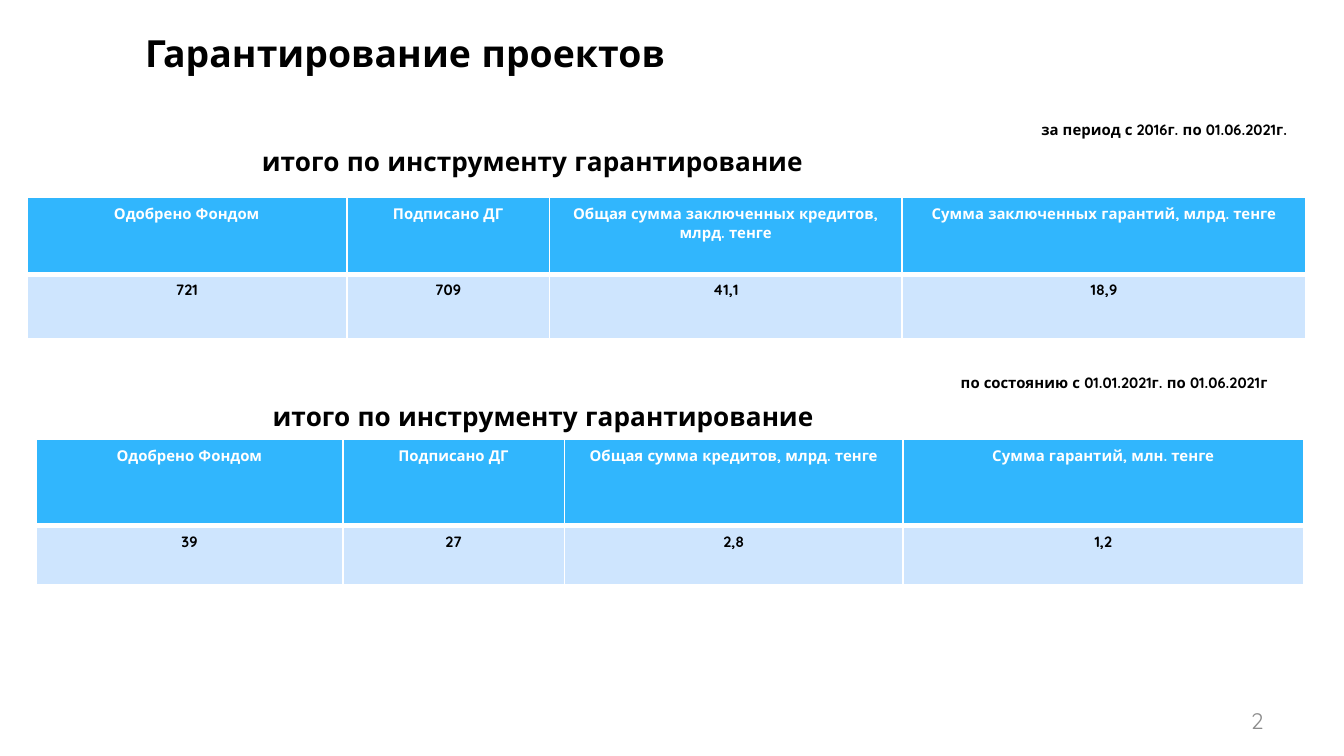
from lxml import etree
from pptx import Presentation
from pptx.dml.color import RGBColor
from pptx.enum import text as t
from pptx.oxml import ns
from pptx.util import Inches, Pt

FONT = "Quicksand"
COLORS = {
    "black": "000000",
    "white": "FFFFFF",
    "gray": "8C8C8C",
    "head": "31B6FD",
    "body": "CEE5FE",
}
TOTAL = "итого по инструменту гарантирование"


def color(name):
    return RGBColor.from_string(COLORS[name])


def write(frame, words, size, tint="black", bold=True, align=t.PP_ALIGN.LEFT):
    frame.text = words
    para = frame.paragraphs[0]
    para.alignment = align
    font = para.runs[0].font
    font.name = FONT
    font.size = Pt(size)
    font.bold = bold
    font.color.rgb = color(tint)


def add_title(slide, words):
    title = slide.shapes.title
    title.left, title.top = Inches(0.98), Inches(0)
    title.width, title.height = Inches(4.88), Inches(0.78)
    title.text_frame.vertical_anchor = t.MSO_ANCHOR.MIDDLE
    write(title.text_frame, words, 20)


def add_label(slide, words, box, size, **style):
    label = slide.shapes.add_textbox(*map(Inches, box))
    label.text_frame.word_wrap = True
    write(label.text_frame, words, size, **style)
    return label


def add_edges(cell, widths):
    props = cell._tc.get_or_add_tcPr()
    for spot, (side, width) in enumerate(widths.items()):
        line = etree.Element(ns.qn(f"a:{side}"), w=str(Pt(width)))
        fill = etree.SubElement(line, ns.qn("a:solidFill"))
        etree.SubElement(fill, ns.qn("a:srgbClr"), val=COLORS["white"])
        props.insert(spot, line)


def add_grid(slide, left, top, widths, heights, rows):
    size = (left, top, sum(widths), sum(heights))
    frame = slide.shapes.add_table(len(rows), len(widths), *map(Inches, size))
    table = frame.table
    for col, width in zip(table.columns, widths):
        col.width = Inches(width)
    for row, height in zip(table.rows, heights):
        row.height = Inches(height)
    styles = [("head", "white", 1, 3), ("body", "black", 3, 1)]
    for r, (back, tint, above, below) in enumerate(styles):
        for c, words in enumerate(rows[r]):
            cell = table.cell(r, c)
            cell.fill.solid()
            cell.fill.fore_color.rgb = color(back)
            write(cell.text_frame, words, 8, tint, align=t.PP_ALIGN.CENTER)
            add_edges(cell, {"lnL": 1, "lnR": 1, "lnT": above, "lnB": below})


def main():
    deck = Presentation()
    deck.slide_width, deck.slide_height = Inches(10), Inches(10 * 9 / 16)
    slide = deck.slides.add_slide(deck.slide_layouts[5])
    add_title(slide, "Гарантирование проектов")

    add_label(slide, "за период с 2016г. по 01.06.2021г.", (7.65, 0.85, 2.36, 0.24), 8)
    add_label(slide, TOTAL, (1.85, 1.03, 6.06, 0.34), 14)
    add_grid(slide, 0.2, 1.47, [2.38, 1.51, 2.62, 3.01], [0.57, 0.48], [
        ["Одобрено Фондом", "Подписано ДГ",
         "Общая сумма заключенных кредитов, млрд. тенге",
         "Сумма заключенных гарантий, млрд. тенге"],
        ["721", "709", "41,1", "18,9"],
    ])

    add_label(slide, "по состоянию с 01.01.2021г. по 01.06.2021г", (7.05, 2.73, 2.6, 0.23), 8)
    add_label(slide, TOTAL, (1.93, 2.93, 4.41, 0.34), 14)
    add_grid(slide, 0.27, 3.27, [2.28, 1.65, 2.52, 2.98], [0.64, 0.44], [
        ["Одобрено Фондом", "Подписано ДГ",
         "Общая сумма кредитов, млрд. тенге", "Сумма гарантий, млн. тенге"],
        ["39", "27", "2,8", "1,2"],
    ])

    page = add_label(slide, "2", (7.17, 5.21, 2.33, 0.3), 12,
                     tint="gray", bold=False, align=t.PP_ALIGN.RIGHT)
    page.text_frame.vertical_anchor = t.MSO_ANCHOR.MIDDLE
    deck.save("out.pptx")


if __name__ == "__main__":
    main()
